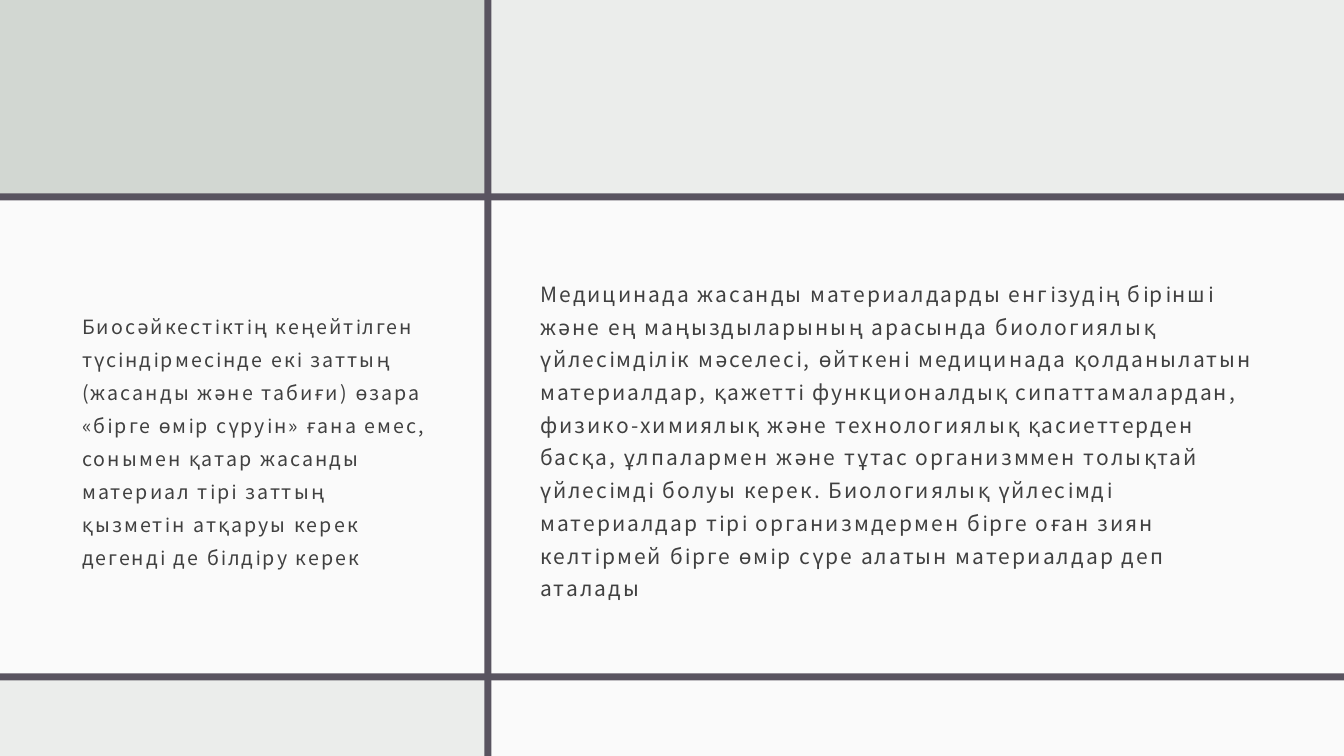
from pptx import Presentation
from pptx.dml.color import RGBColor
from pptx.enum.shapes import MSO_SHAPE
from pptx.enum.text import MSO_ANCHOR, MSO_AUTO_SIZE, PP_ALIGN
from pptx.util import Pt

MIST = RGBColor(0xEB, 0xED, 0xEB)
SAGE = RGBColor(0xD2, 0xD7, 0xD2)
PAPER = RGBColor(0xFA, 0xFA, 0xFA)
PLUM = RGBColor(0x59, 0x54, 0x60)
INK = RGBColor(0x40, 0x40, 0x40)

FONT = "Noto Sans CJK JP"
WIDTH, HEIGHT = 960, 540
BAR = 5
TEXT_TOP, TEXT_HEIGHT = 168.5, 286.5

TITLE = (
    "Биосәйкестіктің кеңейтілген түсіндірмесінде екі заттың (жасанды және "
    "табиғи) өзара «бірге өмір сүруін» ғана емес, сонымен қатар жасанды "
    "материал тірі заттың қызметін атқаруы керек дегенді де білдіру керек"
)
BODY = (
    "Медицинада жасанды материалдарды енгізудің бірінші және ең "
    "маңыздыларының арасында биологиялық үйлесімділік мәселесі, өйткені "
    "медицинада қолданылатын материалдар, қажетті функционалдық "
    "сипаттамалардан, физико-химиялық және технологиялық қасиеттерден басқа, "
    "ұлпалармен және тұтас организммен толықтай үйлесімді болуы керек. "
    "Биологиялық үйлесімді материалдар тірі организмдермен бірге оған зиян "
    "келтірмей бірге өмір сүре алатын материалдар деп аталады"
)


def add_panel(page, left, top, width, height, color):
    panel = page.shapes.add_shape(
        MSO_SHAPE.RECTANGLE, Pt(left), Pt(top), Pt(width), Pt(height))
    panel.shadow.inherit = False
    panel.fill.solid()
    panel.fill.fore_color.rgb = color
    panel.line.fill.background()


def write_text(box, left, width, text, size, line_spacing):
    box.left, box.top = Pt(left), Pt(TEXT_TOP)
    box.width, box.height = Pt(width), Pt(TEXT_HEIGHT)
    frame = box.text_frame
    frame.word_wrap = True
    frame.auto_size = MSO_AUTO_SIZE.NONE
    frame.vertical_anchor = MSO_ANCHOR.MIDDLE
    frame.margin_left = frame.margin_right = frame.margin_top = Pt(8.64)
    frame.margin_bottom = Pt(7.2)
    para = frame.paragraphs[0]
    para.alignment = PP_ALIGN.LEFT
    para.line_spacing = line_spacing
    para.space_before = Pt(0)
    span = para.add_run()
    span.text = text
    para.font.name = FONT
    para.font.size = Pt(size)
    para.font.color.rgb = INK
    # Letter spacing of 1.5 points
    span._r.get_or_add_rPr().set("spc", "150")


def main():
    deck = Presentation()
    deck.slide_width, deck.slide_height = Pt(WIDTH), Pt(HEIGHT)
    page = deck.slides.add_slide(deck.slide_layouts[5])
    page.background.fill.solid()
    page.background.fill.fore_color.rgb = MIST

    # Colour panels
    add_panel(page, 0, 139, WIDTH, 344, PAPER)
    add_panel(page, 0, 0, 348.5, 142, SAGE)
    add_panel(page, 346.5, 485, WIDTH - 346.5, HEIGHT - 485, PAPER)

    # Dividing bars
    for top in (138.2, 481):
        add_panel(page, 0, top, WIDTH, BAR, PLUM)
    add_panel(page, 346, 0, BAR, HEIGHT, PLUM)

    # Title, brought in front of the panels
    title = page.shapes.title
    title.element.getparent().append(title.element)
    write_text(title, 50, 268.5, TITLE, 14, 1.4)

    # Body text
    body = page.shapes.add_textbox(0, 0, 0, 0)
    write_text(body, 377.3, 532, BODY, 15, 1.3)

    deck.save("out.pptx")


if __name__ == "__main__":
    main()
